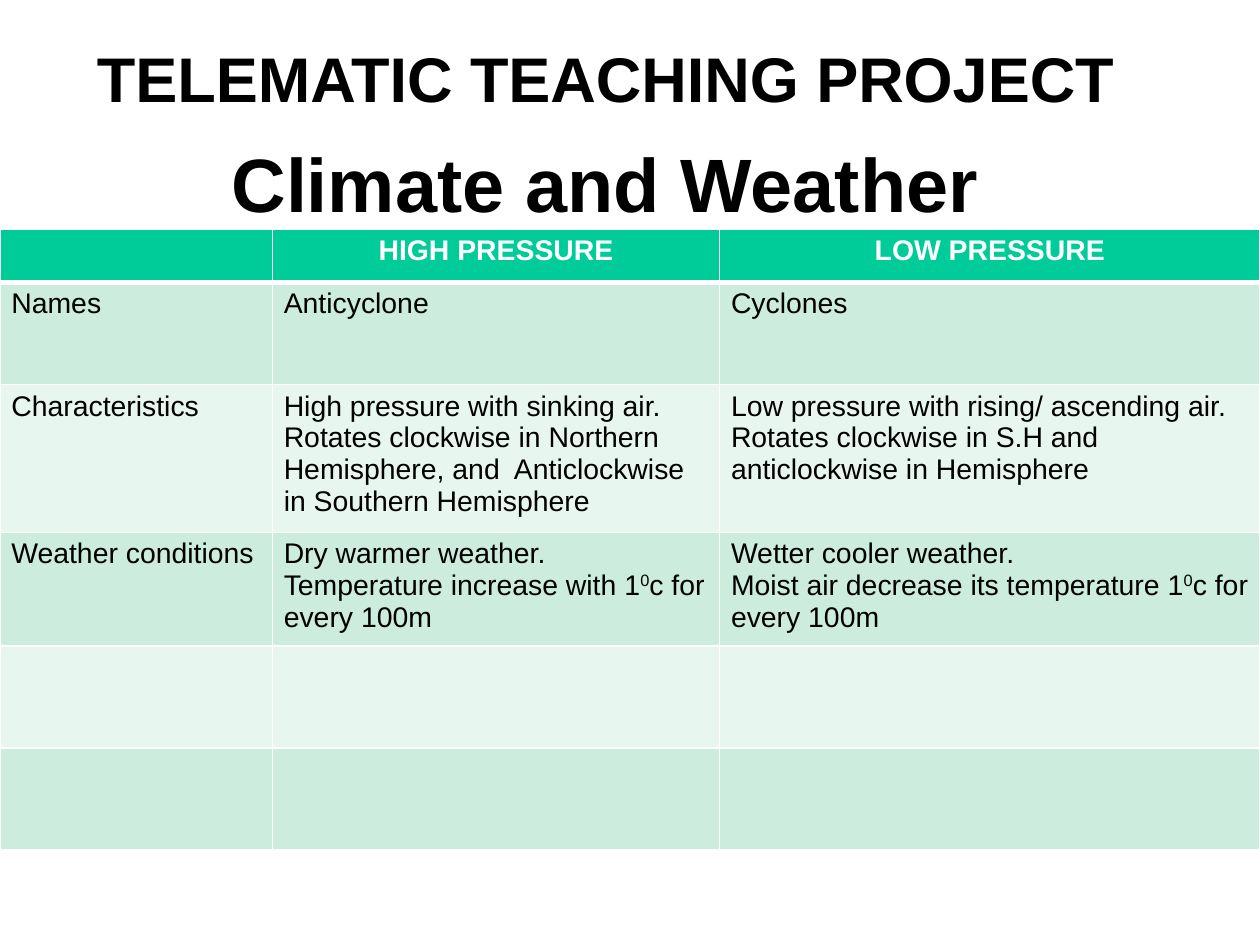
from pptx import Presentation
from pptx.dml.color import RGBColor as RGB
from pptx.enum.text import MSO_ANCHOR as Anchor, PP_ALIGN as Align
from pptx.oxml import parse_xml as xml
from pptx.oxml.ns import nsdecls
from pptx.util import Inches, Pt

BLACK = RGB(0, 0, 0)
WHITE = RGB(0xFF, 0xFF, 0xFF)
GREEN = RGB(0x00, 0xCC, 0x99)
MINT = RGB(0xCC, 0xEC, 0xDE)
PALE = RGB(0xE7, 0xF6, 0xEF)

TITLE = {"name": "Arial", "size": Pt(40), "bold": True}
TOPIC = {"name": "Arial", "size": Pt(48), "bold": True}
HEAD = {"name": "Arial", "size": Pt(18), "bold": True}
BODY = {"name": "Arial", "size": Pt(18), "bold": False}

COLS = [2.4, 3.94, 4.76]
HIGHS = [0.47, 0.9, 1.3, 1, 0.9, 0.9]
ROWS = [
    ["", "HIGH PRESSURE", "LOW PRESSURE"],
    ["Names", "Anticyclone", "Cyclones"],
    ["Characteristics",
     "High pressure with sinking air.\nRotates clockwise in Northern "
     "Hemisphere, and  Anticlockwise in Southern Hemisphere",
     "Low pressure with rising/ ascending air.\nRotates clockwise in S.H "
     "and anticlockwise in Hemisphere"],
    ["Weather conditions",
     "Dry warmer weather.\nTemperature increase with 1^0^c for every 100m",
     "Wetter cooler weather.\nMoist air decrease its temperature "
     "1^0^c for every 100m"],
    ["", "", ""],
    ["", "", ""],
]


def style(font, look, color):
    """Apply a dict of format values and a colour to a font."""
    for key, value in look.items():
        setattr(font, key, value)
    font.color.rgb = color


def write(frame, text, look, color, align):
    """Fill a text frame line by line, raising what stands between carets."""
    for i, line in enumerate(text.split("\n")):
        para = frame.add_paragraph() if i else frame.paragraphs[0]
        para.alignment = align
        style(para.font, look, color)
        for j, part in enumerate(line.split("^") if line else []):
            run = para.add_run()
            run.text = part
            style(run.font, look, color)
            if j % 2:
                run._r.get_or_add_rPr().set("baseline", "30000")


def heading(slide, box, text, look, anchor, top):
    """Place one centred heading in its box."""
    frame = slide.shapes.add_textbox(*map(Inches, box)).text_frame
    frame.word_wrap = True
    frame.vertical_anchor = anchor
    frame.margin_left = frame.margin_right = Inches(0.11)
    frame.margin_top, frame.margin_bottom = Inches(top), Inches(0.06)
    write(frame, text, look, BLACK, Align.CENTER)


def border(cell, sides):
    """Draw white cell borders with the given widths in points."""
    props = cell._tc.get_or_add_tcPr()
    for side, width in sides.items():
        props.append(xml(
            f'<a:ln{side} {nsdecls("a")} w="{Pt(width)}"><a:solidFill>'
            f'<a:srgbClr val="{WHITE}"/></a:solidFill></a:ln{side}>'))


def grid(slide, box):
    """Place the pressure table with a header and banded rows."""
    table = slide.shapes.add_table(
        len(ROWS), len(COLS), *map(Inches, box)).table
    table.horz_banding = False
    for col, width in zip(table.columns, COLS):
        col.width = Inches(width)
    for r, (row, high) in enumerate(zip(ROWS, HIGHS)):
        table.rows[r].height = Inches(high)
        look, color, align = ((BODY, BLACK, Align.LEFT) if r
                              else (HEAD, WHITE, Align.CENTER))
        fill = (MINT if r % 2 else PALE) if r else GREEN
        sides = {"L": 1, "R": 1, "T": 3 if r == 1 else 1, "B": 1 if r else 3}
        for c, text in enumerate(row):
            cell = table.cell(r, c)
            border(cell, sides)
            cell.fill.solid()
            cell.fill.fore_color.rgb = fill
            write(cell.text_frame, text, look, color, align)


def main():
    """Build the slide and save it."""
    deck = Presentation()
    deck.slide_width, deck.slide_height = Inches(11.1), Inches(8.3)
    slide = deck.slides.add_slide(deck.slide_layouts[6])
    heading(slide, (0.2, 0.13, 10.27, 1.1), "TELEMATIC TEACHING PROJECT",
            TITLE, Anchor.MIDDLE, 0.06)
    heading(slide, (1.58, 1.08, 7.5, 0.79), "Climate and Weather",
            TOPIC, Anchor.TOP, 0.13)
    grid(slide, (0, 2.02, sum(COLS), sum(HIGHS)))
    deck.save("out.pptx")


if __name__ == "__main__":
    main()
